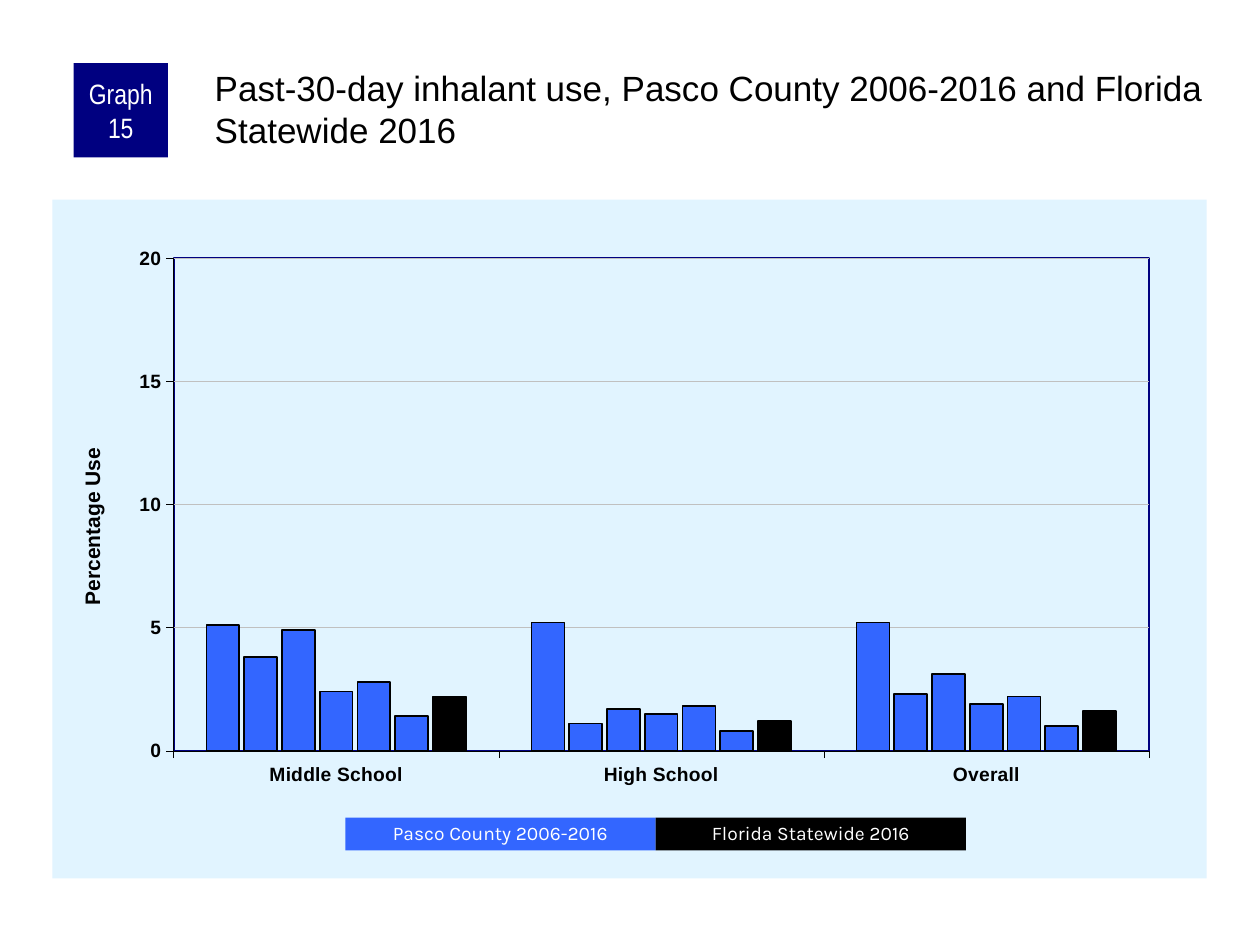
import dataclasses

import lxml.etree
import pptx
import pptx.chart.data
import pptx.dml.color
import pptx.enum.chart
import pptx.enum.shapes
import pptx.enum.text
import pptx.oxml
import pptx.oxml.ns
import pptx.util

Pt = pptx.util.Pt
qn = pptx.oxml.ns.qn


@dataclasses.dataclass(frozen=True)
class Theme:
    """Colours, typefaces and type sizes of the slide."""
    county: str = "3366FF"
    state: str = "000000"
    ink: str = "000000"
    paper: str = "FFFFFF"
    navy: str = "000080"
    panel: str = "E1F4FF"
    grid: str = "C0C0C0"
    body_face: str = "Arial"
    badge_face: str = "Arial Narrow"
    key_face: str = "Karla"
    title_size: float = 20
    badge_size: float = 16
    axis_title_size: float = 12
    label_size: float = 11


THEME = Theme()
LEVELS = ("Middle School", "High School", "Overall")
USE_RATES = (
    (5.1, 5.2, 5.2),
    (3.8, 1.1, 2.3),
    (4.9, 1.7, 3.1),
    (2.4, 1.5, 1.9),
    (2.8, 1.8, 2.2),
    (1.4, 0.8, 1),
    (2.2, 1.2, 1.6),
)


def assign(target, formats):
    """Set each named attribute on the target."""
    for name, value in formats.items():
        setattr(target, name, value)


def style_font(font, face, size, colour, bold=False):
    """Give a font its face, size, colour and weight."""
    assign(font, {"name": face, "size": Pt(size), "bold": bold})
    font.color.rgb = pptx.dml.color.RGBColor.from_string(colour)


def paint(fill, colour):
    """Fill with one solid colour."""
    fill.solid()
    fill.fore_color.rgb = pptx.dml.color.RGBColor.from_string(colour)


def stroke(line, colour, width):
    """Draw a line in one colour and width."""
    paint(line.fill, colour)
    line.width = Pt(width)


def write(frame, wording, font_format, paragraph_format, frame_format):
    """Put one formatted paragraph into a text frame."""
    assign(frame, {"word_wrap": True, "text": wording, **frame_format})
    assign(frame.paragraphs[0], paragraph_format)
    style_font(frame.paragraphs[0].runs[0].font, *font_format)


def add_label(slide, box, wording, colour, font_format, paragraph_format, margins):
    """Add a filled rectangle with a centred label."""
    label = slide.shapes.add_shape(pptx.enum.shapes.MSO_SHAPE.RECTANGLE, *map(Pt, box))
    label.shadow.inherit = False
    paint(label.fill, colour)
    label.line.fill.background()
    write(label.text_frame, wording, font_format,
          {"alignment": pptx.enum.text.PP_ALIGN.CENTER, **paragraph_format},
          {"vertical_anchor": pptx.enum.text.MSO_ANCHOR.MIDDLE, **margins})


def add_heading(slide, box):
    """Place the graph number badge and the title in the box."""
    left, top, width, height = box
    badge_side, title_offset = 54, 78.5
    add_label(slide, (left, top, badge_side, badge_side), "Graph 15", THEME.navy,
              (THEME.badge_face, THEME.badge_size, THEME.paper), {},
              {"margin_left": Pt(3.6), "margin_right": Pt(3.6),
               "margin_top": 0, "margin_bottom": 0})
    title = slide.shapes.title
    assign(title, {"left": Pt(left + title_offset), "top": Pt(top),
                   "width": Pt(width - title_offset), "height": Pt(height)})
    write(title.text_frame,
          "Past-30-day inhalant use, Pasco County 2006-2016 and Florida Statewide 2016",
          (THEME.body_face, THEME.title_size, THEME.ink),
          {"alignment": pptx.enum.text.PP_ALIGN.LEFT},
          {"vertical_anchor": pptx.enum.text.MSO_ANCHOR.TOP,
           "auto_size": pptx.enum.text.MSO_AUTO_SIZE.NONE,
           "margin_left": Pt(2.2), "margin_top": Pt(2.2),
           "margin_right": 0, "margin_bottom": 0})


def set_layout(parent, settings):
    """Give a chart part a manual layout."""
    layout = parent.find(qn("c:layout"))
    if layout is None:
        layout = lxml.etree.Element(qn("c:layout"))
        parent.insert(0, layout)
    manual = lxml.etree.SubElement(layout, qn("c:manualLayout"))
    for name, value in settings.items():
        lxml.etree.SubElement(manual, qn(f"c:{name}")).set("val", str(value))


def chart_frame_format(fill, outline):
    """Return shape properties for a chart area."""
    return pptx.oxml.parse_xml(
        f'<c:spPr {pptx.oxml.ns.nsdecls("c", "a")}>{fill}'
        f'<a:ln w="{Pt(1)}">{outline}</a:ln></c:spPr>')


def solid(colour):
    """Return the markup of a solid fill."""
    return f'<a:solidFill><a:srgbClr val="{colour}"/></a:solidFill>'


def format_axes(chart):
    """Format both axes, the gridlines and the axis title."""
    for axis in (chart.category_axis, chart.value_axis):
        assign(axis, {"major_tick_mark": pptx.enum.chart.XL_TICK_MARK.OUTSIDE,
                      "minor_tick_mark": pptx.enum.chart.XL_TICK_MARK.NONE})
        style_font(axis.tick_labels.font, THEME.body_face, THEME.label_size,
                   THEME.ink, True)
        stroke(axis.format.line, THEME.ink, 0.25)
    percentage = chart.value_axis
    assign(percentage, {"minimum_scale": 0, "maximum_scale": 20, "major_unit": 5,
                        "has_major_gridlines": True})
    assign(percentage.tick_labels, {"number_format": "0",
                                    "number_format_is_linked": False})
    stroke(percentage.major_gridlines.format.line, THEME.grid, 0.25)
    caption = percentage.axis_title.text_frame
    caption.text = "Percentage Use"
    style_font(caption.paragraphs[0].runs[0].font, THEME.body_face,
               THEME.axis_title_size, THEME.ink, True)
    title_xml = percentage.axis_title._element
    title_xml.find(".//" + qn("a:bodyPr")).set("rot", "-5400000")
    set_layout(title_xml, {"xMode": "edge", "yMode": "edge", "x": 0.02, "y": 0.36})


def add_use_chart(slide, box):
    """Place the clustered columns in the box."""
    rates = pptx.chart.data.CategoryChartData()
    rates.categories = LEVELS
    for number, values in enumerate(USE_RATES, 1):
        rates.add_series(f"Series {number}", values)
    chart = slide.shapes.add_chart(pptx.enum.chart.XL_CHART_TYPE.COLUMN_CLUSTERED,
                                   *map(Pt, box), rates).chart
    assign(chart, {"has_legend": False, "has_title": False})
    style_font(chart.font, THEME.body_face, 8, THEME.ink)
    columns = chart.plots[0]
    assign(columns, {"gap_width": 200, "overlap": -15, "vary_by_categories": False})
    colours = [THEME.county] * (len(USE_RATES) - 1) + [THEME.state]
    for survey, colour in zip(columns.series, colours):
        paint(survey.format.fill, colour)
        stroke(survey.format.line, THEME.ink, 1)
    format_axes(chart)
    chart_xml = chart._chartSpace.find(qn("c:chart"))
    chart_xml.addnext(chart_frame_format(solid(THEME.panel), "<a:noFill/>"))
    plot_xml = chart_xml.find(qn("c:plotArea"))
    set_layout(plot_xml, {"layoutTarget": "inner", "xMode": "edge", "yMode": "edge",
                          "x": 0.105, "y": 0.086, "w": 0.845, "h": 0.726})
    plot_xml.append(chart_frame_format("<a:noFill/>", solid(THEME.navy)))


def add_key(slide, box):
    """Split the box into equal key labels."""
    left, top, width, height = box
    entries = (("Pasco County 2006-2016", THEME.county),
               ("Florida Statewide 2016", THEME.state))
    share = width / len(entries)
    for position, (wording, colour) in enumerate(entries):
        add_label(slide, (left + position * share, top, share, height), wording, colour,
                  (THEME.key_face, THEME.label_size, THEME.paper),
                  {"line_spacing": 0.9}, {})


def main():
    """Build and save the slide."""
    deck = pptx.Presentation()
    assign(deck, {"slide_width": Pt(720), "slide_height": Pt(540)})
    slide = deck.slides.add_slide(deck.slide_layouts.get_by_name("Title Only"))
    add_use_chart(slide, (30, 114, 659.5, 388))
    add_heading(slide, (42, 36, 648.5, 60))
    add_key(slide, (197.3, 467.3, 354.7, 18.7))
    deck.save("out.pptx")


if __name__ == "__main__":
    main()
